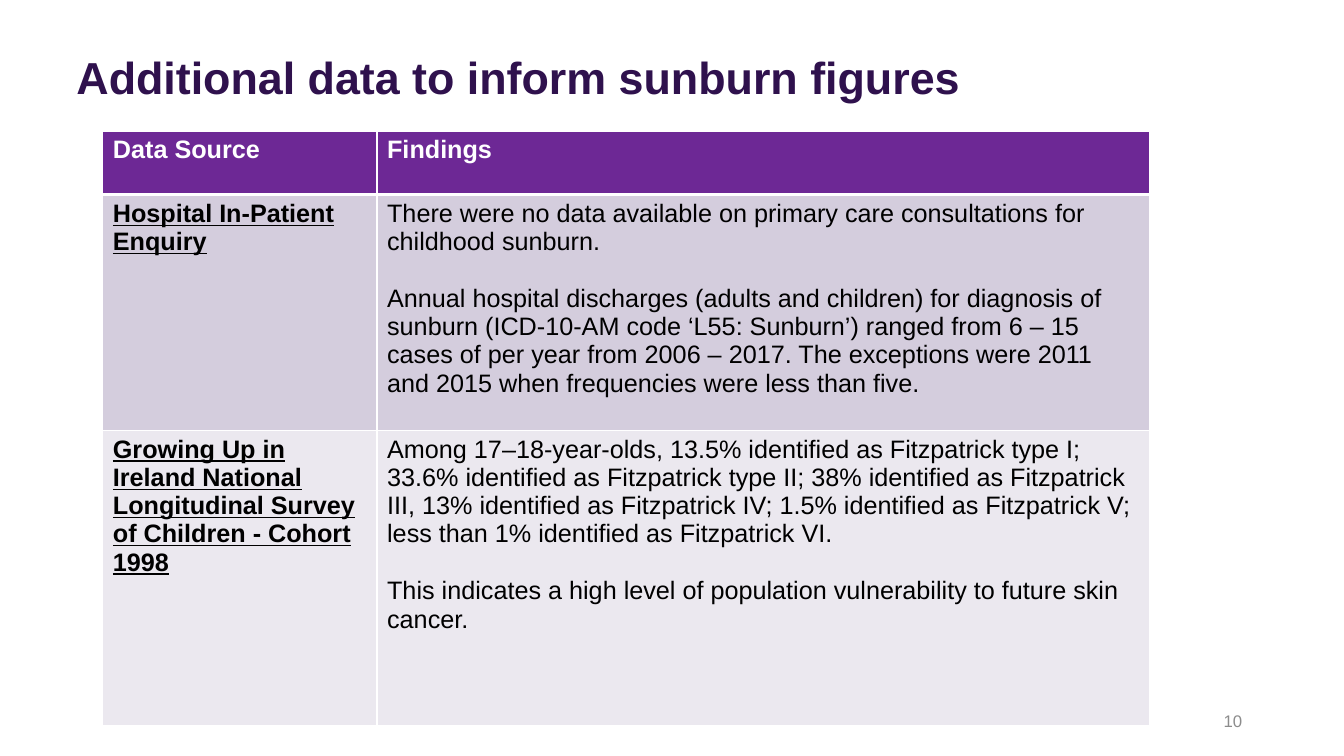
from dataclasses import dataclass

from lxml import etree
from pptx import Presentation
from pptx.dml.color import RGBColor
from pptx.enum.text import MSO_ANCHOR, PP_ALIGN
from pptx.oxml.ns import qn
from pptx.util import Inches, Pt

TOP, MIDDLE = MSO_ANCHOR.TOP, MSO_ANCHOR.MIDDLE
LEFT, RIGHT = PP_ALIGN.LEFT, PP_ALIGN.RIGHT

TITLE = "Additional data to inform sunburn figures"
NUMBER = "10"
# Each row: source, paragraphs of findings
ROWS = [
    ("Data Source", ["Findings"]),
    ("Hospital In-Patient Enquiry", [
        "There were no data available on primary care consultations for "
        "childhood sunburn.",
        "Annual hospital discharges (adults and children) for diagnosis of "
        "sunburn (ICD-10-AM code ‘L55: Sunburn’) ranged from 6 – 15 cases of "
        "per year from 2006 – 2017. The exceptions were 2011 and 2015 when "
        "frequencies were less than five.",
    ]),
    ("Growing Up in Ireland National Longitudinal Survey of Children - "
     "Cohort 1998", [
        "Among 17–18-year-olds, 13.5% identified as Fitzpatrick type I; "
        "33.6% identified as Fitzpatrick type II; 38% identified as "
        "Fitzpatrick III, 13% identified as Fitzpatrick IV; 1.5% identified "
        "as Fitzpatrick V; less than 1% identified as Fitzpatrick VI.",
        "This indicates a high level of population vulnerability to future "
        "skin cancer.",
    ]),
]
WIDTHS = [2.72, 7.66]
HEIGHTS = [0.63, 2.34, 2.93]


@dataclass(frozen=True)
class Theme:
    font: str = "Arial"
    title: str = "2F114D"
    head: str = "6D2895"
    bands: tuple = ("D4CDDD", "EBE8EF")
    white: str = "FFFFFF"
    text: str = "000000"
    grey: str = "8C8C8C"
    title_size: float = 32
    body_size: float = 18
    small_size: float = 12
    gap: float = 20.5
    thin: float = 1
    thick: float = 3


THEME = Theme()


def style(para, size, color, bold=False, line=False):
    font = para.font
    font.name, font.size = THEME.font, Pt(size)
    font.bold, font.underline = bold, line
    font.color.rgb = RGBColor.from_string(color)


def add_text(slide, box, text, size, color, bold, align, anchor):
    frame = slide.shapes.add_textbox(*map(Inches, box)).text_frame
    frame.word_wrap, frame.vertical_anchor = True, anchor
    para = frame.paragraphs[0]
    para.text, para.alignment = text, align
    style(para, size, color, bold)
    return para


def add_edges(cell, row):
    """Draw white cell borders, thick between header and body."""
    props = cell._tc.get_or_add_tcPr()
    thick = {(0, "lnB"), (1, "lnT")}
    for side in ("lnL", "lnR", "lnT", "lnB"):
        width = THEME.thick if (row, side) in thick else THEME.thin
        edge = etree.SubElement(props, qn("a:" + side), w=str(Pt(width)))
        fill = etree.SubElement(edge, qn("a:solidFill"))
        etree.SubElement(fill, qn("a:srgbClr"), val=THEME.white)


def fill_cell(cell, row, col, paras):
    head = row == 0
    add_edges(cell, row)
    cell.fill.solid()
    fill = THEME.head if head else THEME.bands[(row - 1) % 2]
    cell.fill.fore_color.rgb = RGBColor.from_string(fill)
    cell.text = "\n".join(paras)
    for i, para in enumerate(cell.text_frame.paragraphs):
        if i:
            para.space_before = Pt(THEME.gap)
        style(para, THEME.body_size, THEME.white if head else THEME.text,
              bold=head or col == 0, line=not head and col == 0)


def add_grid(slide):
    box = (1.02, 1.3, sum(WIDTHS), sum(HEIGHTS))
    table = slide.shapes.add_table(
        len(ROWS), len(WIDTHS), *map(Inches, box)).table
    table.horz_banding = False
    for col, width in zip(table.columns, WIDTHS):
        col.width = Inches(width)
    for r, (source, found) in enumerate(ROWS):
        table.rows[r].height = Inches(HEIGHTS[r])
        for c, paras in enumerate(([source], found)):
            fill_cell(table.cell(r, c), r, c, paras)


def main():
    deck = Presentation()
    deck.slide_width, deck.slide_height = Inches(13.33), Inches(7.5)
    slide = deck.slides.add_slide(deck.slide_layouts[6])
    title = add_text(slide, (0.66, 0.5, 11.6, 0.66), TITLE,
                     THEME.title_size, THEME.title, True, LEFT, TOP)
    title.line_spacing = 0.9
    add_text(slide, (9.42, 6.95, 3, 0.4), NUMBER,
             THEME.small_size, THEME.grey, False, RIGHT, MIDDLE)
    add_grid(slide)
    deck.save("out.pptx")


if __name__ == "__main__":
    main()
